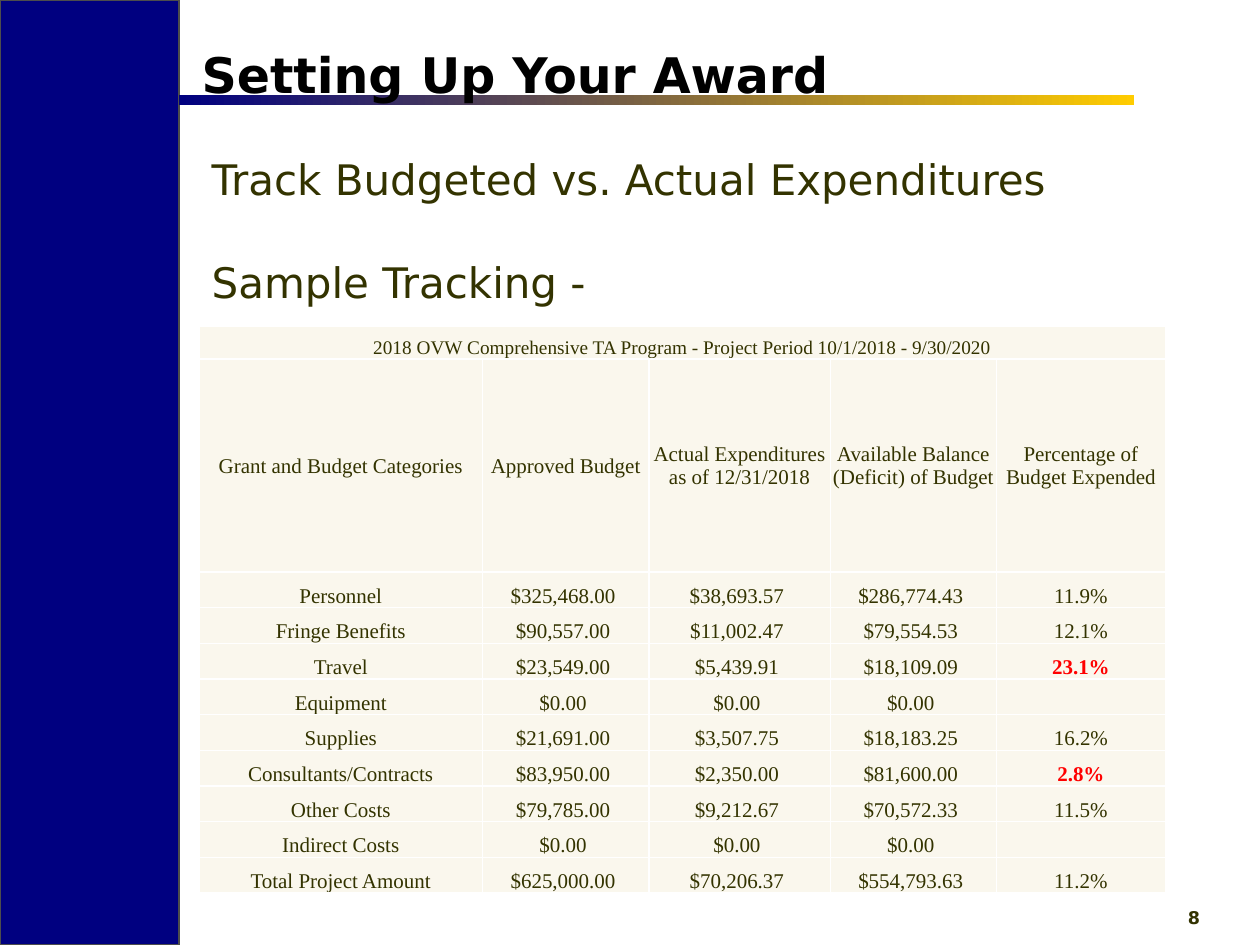
"""Build the budget tracking slide with its sidebar, headings and expenditure table."""
from lxml import etree
from pptx import Presentation, util as u
from pptx.dml import color
from pptx.enum import shapes, text
from pptx.oxml import ns

SANS, SERIF = "DejaVu Sans", "Times New Roman"
NAVY, GOLD, OLIVE, CREAM = "000080", "FFCC00", "333300", "FAF7ED"
MID, LOW = text.MSO_ANCHOR.MIDDLE, text.MSO_ANCHOR.BOTTOM


def hue(code):
    return color.RGBColor.from_string(code)


def write(para, words, size, face, tint=OLIVE, bold=False):
    run = para.add_run()
    run.text = words
    font = run.font
    font.size, font.name, font.bold = u.Pt(size), face, bold
    font.color.rgb = hue(tint)


deck = Presentation()
deck.slide_width, deck.slide_height = u.Inches(10), u.Inches(7.5)
slide = deck.slides.add_slide(deck.slide_layouts[1])
items = slide.shapes

side, bar = [
    items.add_shape(shapes.MSO_SHAPE.RECTANGLE, *map(u.Inches, place))
    for place in [(0, 0, 1.42, 7.5), (1.42, 0.75, 7.58, 0.08)]
]
for block in (side, bar):
    block.shadow.inherit = False
side.fill.solid()
side.fill.fore_color.rgb = hue(NAVY)
side.line.color.rgb = hue("4D4D4D")
side.line.width = u.Pt(1)
bar.line.fill.background()
bar.fill.gradient()
bar.fill.gradient_angle = 0
for stop, code in zip(bar.fill.gradient_stops, (NAVY, GOLD)):
    stop.color.rgb = hue(code)

frame = items.add_textbox(*map(u.Inches, (9.33, 7.15, 0.5, 0.27))).text_frame
frame.word_wrap = True
write(frame.paragraphs[0], "8", 10, SANS, OLIVE, True)

title, body = items.title, slide.placeholders[1]
for holder, place, lines, size, tint, bold, inset in [
    (title, (0.5, 0.3, 9, 1.25), ["Setting Up Your Award"], 28, "000000", True, 1),
    (body, (1.58, 1.17, 7.92, 0.58),
     ["Track Budgeted vs. Actual Expenditures", "Sample Tracking -"], 24, OLIVE, False, 0),
]:
    items._spTree.append(holder._element)
    holder.left, holder.top, holder.width, holder.height = map(u.Inches, place)
    frame = holder.text_frame
    frame.word_wrap = True
    frame.auto_size = text.MSO_AUTO_SIZE.NONE
    frame.vertical_anchor = text.MSO_ANCHOR.TOP
    for row, words in enumerate(lines):
        para = frame.add_paragraph() if row else frame.paragraphs[0]
        para.alignment = text.PP_ALIGN.LEFT
        para.space_before = u.Pt(30 * row)
        props = para._p.get_or_add_pPr()
        props.set("marL", str(u.Inches(inset)))
        props.set("indent", "0")
        etree.SubElement(props, ns.qn("a:buNone"))
        write(para, words, size, SANS, tint, bold)

costs = [
    ("Personnel", 325468, 38693.57),
    ("Fringe Benefits", 90557, 11002.47),
    ("Travel", 23549, 5439.91),
    ("Equipment", 0, 0),
    ("Supplies", 21691, 3507.75),
    ("Consultants/Contracts", 83950, 2350),
    ("Other Costs", 79785, 9212.67),
    ("Indirect Costs", 0, 0),
]
costs.append(("Total Project Amount", sum(c[1] for c in costs), sum(c[2] for c in costs)))
flags = ("Travel", "Consultants/Contracts")
cells = [
    ["2018 OVW Comprehensive TA Program - Project Period 10/1/2018 - 9/30/2020"] + [""] * 4,
    ["Grant and Budget Categories", "Approved Budget", "Actual Expenditures as of 12/31/2018",
     "Available Balance (Deficit) of Budget", "Percentage of Budget Expended"],
]
for name, plan, spent in costs:
    money = [f"${cash:,.2f} " for cash in (plan, spent, plan - spent)]
    cells.append([name, *money, f"{spent / plan:.1%}" if plan else ""])

wide = [2.25, 1.32, 1.44, 1.32, 1.34]
tall = [0.26, 1.69] + [2.55 / len(costs)] * len(costs)
grid = items.add_table(len(tall), len(wide), *map(u.Inches, (1.58, 2.59, sum(wide), sum(tall)))).table
grid.first_row = grid.horz_banding = False
for col, size in zip(grid.columns, wide):
    col.width = u.Inches(size)
for row, size in zip(grid.rows, tall):
    row.height = u.Inches(size)
grid.cell(0, 0).merge(grid.cell(0, len(wide) - 1))

for r, line in enumerate(cells):
    for c, words in enumerate(line):
        cell = grid.cell(r, c)
        cell.margin_left = cell.margin_right = cell.margin_top = u.Inches(0.01)
        cell.margin_bottom = 0
        cell.vertical_anchor = MID if r == 1 else LOW
        props = cell._tc.get_or_add_tcPr()
        for edge in ("lnL", "lnR", "lnT", "lnB"):
            rule = etree.SubElement(props, ns.qn(f"a:{edge}"), w=str(u.Pt(1)))
            fill = etree.SubElement(rule, ns.qn("a:solidFill"))
            etree.SubElement(fill, ns.qn("a:srgbClr"), val="FFFFFF")
        cell.fill.solid()
        cell.fill.fore_color.rgb = hue(CREAM)
        para = cell.text_frame.paragraphs[0]
        para.alignment = text.PP_ALIGN.CENTER
        if words:
            hot = c == 4 and line[0] in flags
            write(para, words, 12 if r else 11, SERIF, "FF0000" if hot else OLIVE, hot)
        else:
            etree.SubElement(para._p, ns.qn("a:endParaRPr"), sz="1100")

deck.save("out.pptx")
